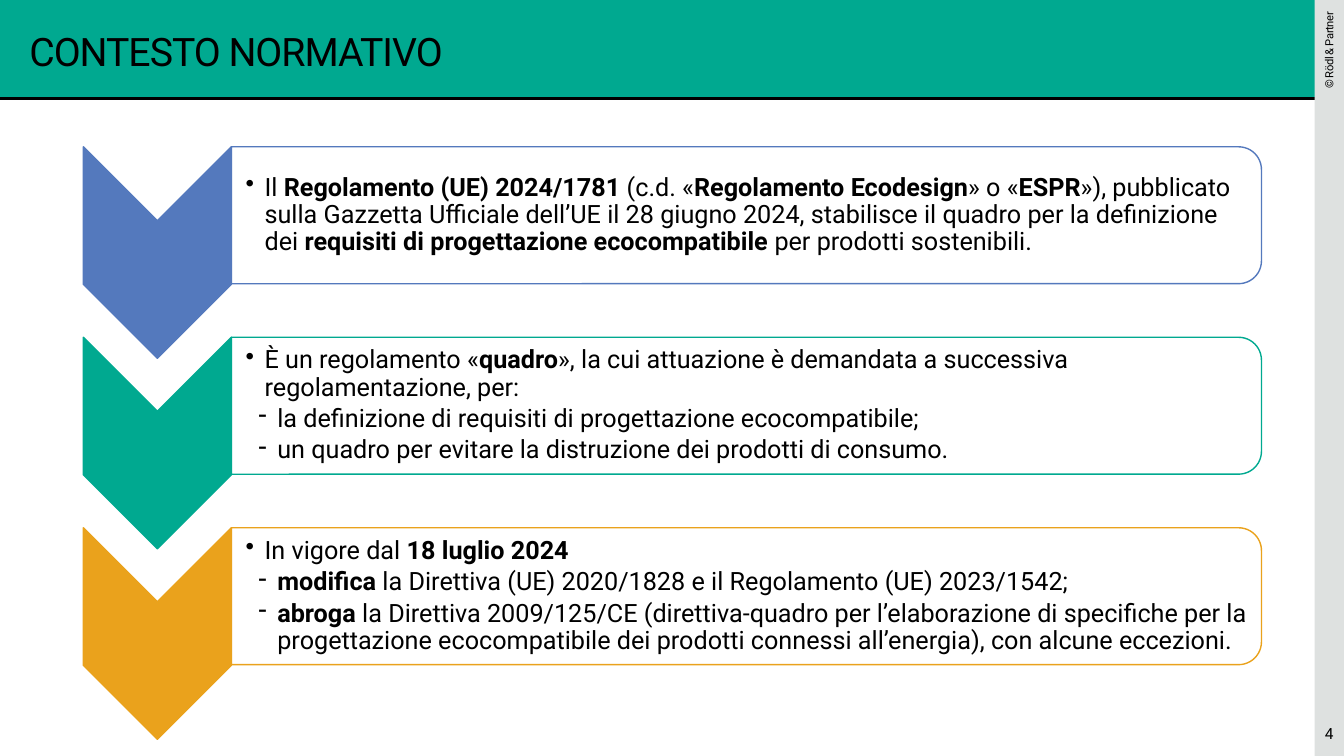
"""Build the slide on the regulatory context, with three chevron steps."""
from lxml.etree import SubElement
from pptx import Presentation
from pptx.dml.color import RGBColor
from pptx.enum.shapes import MSO_CONNECTOR, MSO_SHAPE
from pptx.enum.text import MSO_ANCHOR, PP_ALIGN
from pptx.oxml.ns import qn
from pptx.util import Cm, Pt

SIZE = (33.87, 19.05)
BLACK, WHITE, GREEN, GREY = "000000", "FFFFFF", "00A990", "DEE1E0"
TITLE = "CONTESTO NORMATIVO"
OWNER = "© Rödl & Partner"
PAGE = "4"
STEPS = [
    ("5479BD", [
        ("•", "Il **Regolamento (UE) 2024/1781 **(c.d. «**Regolamento Ecodesign**» o «**ESPR**»), "
              "pubblicato sulla Gazzetta Ufficiale dell’UE il 28 giugno 2024, stabilisce il quadro "
              "per la definizione dei **requisiti di progettazione ecocompatibile** per prodotti "
              "sostenibili."),
    ]),
    (GREEN, [
        ("•", "È un regolamento «**quadro**», la cui attuazione è demandata a successiva "
              "regolamentazione, per:"),
        ("-", "la definizione di requisiti di progettazione ecocompatibile;"),
        ("-", "un quadro per evitare la distruzione dei prodotti di consumo."),
    ]),
    ("EAA21C", [
        ("•", "In vigore dal **18 luglio 2024**"),
        ("-", "**modifica** la Direttiva (UE) 2020/1828 e il Regolamento (UE) 2023/1542;"),
        ("-", "**abroga **la Direttiva 2009/125/CE (direttiva-quadro per l’elaborazione di "
              "specifiche per la progettazione ecocompatibile dei prodotti connessi all’energia), "
              "con alcune eccezioni."),
    ]),
]
LEFT, TOP, PITCH = 2.1, 3.7, 4.8
ARROW = (3.73, 5.33)
PANEL = (25.96, 3.45)
BODY = (25.78, 3.12)
INDENT = {"•": 0.48, "-": 0.8}
HANG = -0.48


def tint(code):
    return RGBColor.from_string(code)


def style(item, values):
    for name, value in values.items():
        setattr(item, name, value)


def place(box, turn):
    x, y, w, h = box
    if turn % 180:
        x, y, w, h = x + (w - h) / 2, y + (h - w) / 2, h, w
    return [Cm(v) for v in (x, y, w, h)]


def draw(page, kind, box, fill, line=None, turn=0):
    shape = page.shapes.add_shape(kind, *place(box, turn))
    shape.rotation = turn
    shape.shadow.inherit = False
    shape.fill.solid()
    shape.fill.fore_color.rgb = tint(fill)
    if line:
        shape.line.color.rgb = tint(line)
        shape.line.width = Pt(1)
    else:
        shape.line.fill.background()
    return shape


def write(page, box, items, size, inset=(0, 0, 0, 0), turn=0, wrap=True, space=0,
          align=PP_ALIGN.LEFT):
    shape = page.shapes.add_textbox(*place(box, turn))
    shape.rotation = turn
    frame = shape.text_frame
    sides = ("margin_left", "margin_top", "margin_right", "margin_bottom")
    style(frame, {"word_wrap": wrap, "vertical_anchor": MSO_ANCHOR.MIDDLE,
                  **{side: Cm(v) for side, v in zip(sides, inset)}})
    for i, (mark, text) in enumerate(items):
        para = frame.add_paragraph() if i else frame.paragraphs[0]
        para.alignment = align
        if mark:
            style(para, {"line_spacing": 0.9, "space_after": Pt(3)})
            props = para._p.get_or_add_pPr()
            props.set("marL", str(Cm(INDENT[mark])))
            props.set("indent", str(Cm(HANG)))
            SubElement(props, qn("a:buChar")).set("char", mark)
        for j, part in enumerate(text.split("**")):
            if part:
                run = para.add_run()
                run.text = part
                style(run.font, {"name": "Roboto", "size": Pt(size), "bold": j % 2 == 1})
                run.font.color.rgb = tint(BLACK)
                if space:
                    run._r.get_or_add_rPr().set("spc", str(space))


def frame(page):
    wide, high = SIZE
    draw(page, MSO_SHAPE.RECTANGLE, (0, 0, wide, 2.49), GREEN)
    rule = page.shapes.add_connector(MSO_CONNECTOR.STRAIGHT, 0, Cm(2.49), Cm(wide), Cm(2.49))
    rule.line.color.rgb = tint(BLACK)
    rule.line.width = Pt(2.25)
    SubElement(rule._element.spPr, qn("a:effectLst"))
    draw(page, MSO_SHAPE.RECTANGLE, (33.13, 0, 0.74, high), GREY, turn=270)
    write(page, (33.12, 0, 0.74, 2.51), [("", OWNER)], 8, (0, 0, 0.3, 0), 270, False, -30,
          PP_ALIGN.RIGHT)
    write(page, (0.74, 0.74, 31.8, 1.09), [("", TITLE)], 28, space=-70)
    write(page, (33.13, 17.93, 0.74, 1.12), [("", PAGE)], 11, align=PP_ALIGN.CENTER)


def step(page, top, hue, items):
    edge = LEFT + ARROW[0]
    draw(page, MSO_SHAPE.CHEVRON, (LEFT, top, *ARROW), hue, hue, 90)
    panel = draw(page, MSO_SHAPE.ROUND_2_SAME_RECTANGLE, (edge, top, *PANEL), WHITE, hue, 90)
    color = panel._element.spPr.find(qn("a:solidFill"))[0]
    SubElement(color, qn("a:alpha")).set("val", "90000")
    inner = top + (PANEL[1] - BODY[1]) / 2
    write(page, (edge, inner, *BODY), items, 18, (0.36, 0.03, 0.03, 0.03))


def main():
    deck = Presentation()
    deck.slide_width, deck.slide_height = (Cm(v) for v in SIZE)
    page = deck.slides.add_slide(deck.slide_layouts[6])
    frame(page)
    for i, (hue, items) in enumerate(STEPS):
        step(page, TOP + i * PITCH, hue, items)
    deck.save("out.pptx")


if __name__ == "__main__":
    main()
